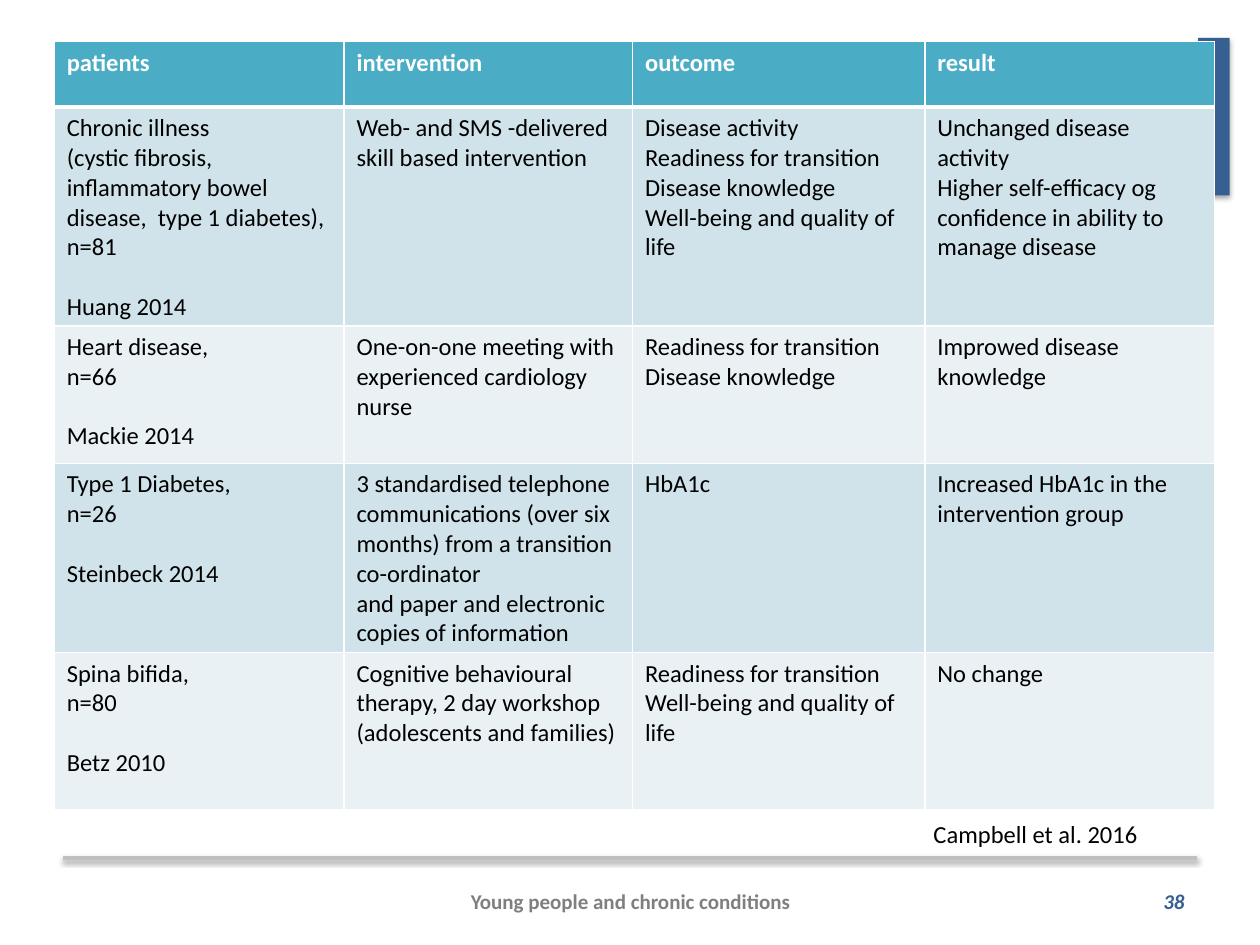
"""Build the slide with a table of transition intervention studies."""
from typing import NamedTuple

from lxml import etree
from pptx import Presentation
from pptx.dml.color import RGBColor
from pptx.enum.shapes import MSO_CONNECTOR, MSO_SHAPE
from pptx.enum.text import MSO_ANCHOR, PP_ALIGN
from pptx.oxml.ns import qn
from pptx.util import Inches, Pt

STRAIGHT = MSO_CONNECTOR.STRAIGHT
RECTANGLE = MSO_SHAPE.RECTANGLE
TOP, MIDDLE = MSO_ANCHOR.TOP, MSO_ANCHOR.MIDDLE
LEFT, CENTER, RIGHT = PP_ALIGN.LEFT, PP_ALIGN.CENTER, PP_ALIGN.RIGHT

WHITE = RGBColor(0xFF, 0xFF, 0xFF)
BLACK = RGBColor(0, 0, 0)
GREY = RGBColor(0x7F, 0x7F, 0x7F)
RULE_GREY = RGBColor(0xBF, 0xBF, 0xBF)
NAVY = RGBColor(0x37, 0x60, 0x92)
TEAL = RGBColor(0x4B, 0xAC, 0xC6)
BANDS = (RGBColor(0xD0, 0xE3, 0xEA), RGBColor(0xE9, 0xF1, 0xF5))

BODY = {"name": "Calibri", "size": Pt(14), "bold": False}
HEADING = {**BODY, "bold": True}
FOOTER = {"name": "Calibri", "size": Pt(12), "bold": True}
CITATION_GAP = Pt(17)


class Label(NamedTuple):
    text: str
    box: tuple[float, float, float, float]
    color: RGBColor
    font: dict
    alignment: PP_ALIGN
    anchor: MSO_ANCHOR


class Study(NamedTuple):
    patients: list[str]
    citation: str
    intervention: list[str]
    outcome: list[str]
    result: list[str]


LABELS = [
    Label("Young people and chronic conditions", (3.42, 6.95, 3.17, 0.4),
          GREY, FOOTER, CENTER, MIDDLE),
    Label("38", (7.17, 6.95, 2.33, 0.4), NAVY, {**FOOTER, "italic": True}, RIGHT, MIDDLE),
    Label("Campbell et al. 2016", (7.31, 6.45, 2.15, 0.34), BLACK, BODY, LEFT, TOP),
]

HEADERS = ["patients", "intervention", "outcome", "result"]
STUDIES = [
    Study(
        ["Chronic illness",
         "(cystic fibrosis, inflammatory bowel disease,  type 1 diabetes), n=81"],
        "Huang 2014",
        ["Web- and SMS -delivered", "skill based intervention"],
        ["Disease activity", "Readiness for transition", "Disease knowledge",
         "Well-being and quality of life"],
        ["Unchanged disease activity",
         "Higher self-efficacy og confidence in ability to manage disease"],
    ),
    Study(
        ["Heart disease,", "n=66"],
        "Mackie 2014",
        ["One-on-one meeting with experienced cardiology nurse"],
        ["Readiness for transition", "Disease knowledge"],
        ["Improwed disease knowledge"],
    ),
    Study(
        ["Type 1 Diabetes,", "n=26"],
        "Steinbeck 2014",
        ["3 standardised telephone",
         "communications (over six months) from a transition co-ordinator",
         "and paper and electronic", "copies of information"],
        ["HbA1c"],
        ["Increased HbA1c in the intervention group"],
    ),
    Study(
        ["Spina bifida,", "n=80"],
        "Betz 2010",
        ["Cognitive behavioural therapy, 2 day workshop (adolescents and families)"],
        ["Readiness for transition", "Well-being and quality of life"],
        ["No change"],
    ),
]
COLUMN_WIDTHS = [2.3, 2.29, 2.32, 2.3]
ROW_HEIGHTS = [0.52, 1.7, 1.09, 1.48, 1.25]


def write_lines(text_frame, lines: list[str], font: dict, color: RGBColor) -> None:
    text_frame.word_wrap = True
    for index, line in enumerate(lines):
        paragraph = text_frame.paragraphs[0] if index == 0 else text_frame.add_paragraph()
        run = paragraph.add_run()
        run.text = line
        for attribute, value in font.items():
            setattr(run.font, attribute, value)
        run.font.color.rgb = color


def add_shadow(shape, opacity: int, blur: float, distance: float) -> None:
    properties = shape._element.spPr
    effects = etree.SubElement(properties, qn("a:effectLst"))
    shadow = etree.SubElement(effects, qn("a:outerShdw"), blurRad=str(Pt(blur)),
                              dist=str(Pt(distance)), dir="5400000", rotWithShape="0")
    color = etree.SubElement(shadow, qn("a:srgbClr"), val=str(BLACK))
    etree.SubElement(color, qn("a:alpha"), val=str(opacity * 1000))


def add_decoration(slide) -> None:
    rule = slide.shapes.add_connector(
        STRAIGHT, Inches(0.5), Inches(6.81), Inches(9.5), Inches(6.81))
    rule.line.color.rgb = RULE_GREY
    rule.line.width = Pt(2)
    add_shadow(rule, 38, 3.1, 1.6)
    tab = slide.shapes.add_shape(
        RECTANGLE, Inches(9.51), Inches(0.3), Inches(0.25), Inches(1.25))
    tab.fill.solid()
    tab.fill.fore_color.rgb = NAVY
    tab.line.fill.background()
    add_shadow(tab, 35, 3.1, 1.8)


def add_label(slide, label: Label) -> None:
    text_frame = slide.shapes.add_textbox(*map(Inches, label.box)).text_frame
    text_frame.vertical_anchor = label.anchor
    write_lines(text_frame, [label.text], label.font, label.color)
    text_frame.paragraphs[0].alignment = label.alignment


def format_cell(cell, fill: RGBColor, top: int, bottom: int) -> None:
    properties = cell._tc.get_or_add_tcPr()
    for side, width in {"L": 1, "R": 1, "T": top, "B": bottom}.items():
        border = etree.SubElement(properties, qn(f"a:ln{side}"), w=str(Pt(width)))
        solid = etree.SubElement(border, qn("a:solidFill"))
        etree.SubElement(solid, qn("a:srgbClr"), val=str(WHITE))
    cell.fill.solid()
    cell.fill.fore_color.rgb = fill


def add_study_table(slide) -> None:
    table = slide.shapes.add_table(
        len(ROW_HEIGHTS), len(COLUMN_WIDTHS), Inches(0.43), Inches(0.33),
        Inches(sum(COLUMN_WIDTHS)), Inches(sum(ROW_HEIGHTS))).table
    for column, width in zip(table.columns, COLUMN_WIDTHS):
        column.width = Inches(width)
    for row, height in zip(table.rows, ROW_HEIGHTS):
        row.height = Inches(height)
    for cell, header in zip(table.rows[0].cells, HEADERS):
        format_cell(cell, TEAL, 1, 3)
        write_lines(cell.text_frame, [header], HEADING, WHITE)
    for index, study in enumerate(STUDIES):
        cells = list(table.rows[index + 1].cells)
        columns = [[*study.patients, study.citation], study.intervention,
                   study.outcome, study.result]
        for cell, lines in zip(cells, columns):
            format_cell(cell, BANDS[index % 2], 3 if index == 0 else 1, 1)
            write_lines(cell.text_frame, lines, BODY, BLACK)
        cells[0].text_frame.paragraphs[-1].space_before = CITATION_GAP


def main() -> None:
    presentation = Presentation()
    presentation.slide_width = Inches(10)
    presentation.slide_height = Inches(7.5)
    slide = presentation.slides.add_slide(presentation.slide_layouts[6])
    add_decoration(slide)
    for label in LABELS:
        add_label(slide, label)
    add_study_table(slide)
    presentation.save("out.pptx")


if __name__ == "__main__":
    main()
